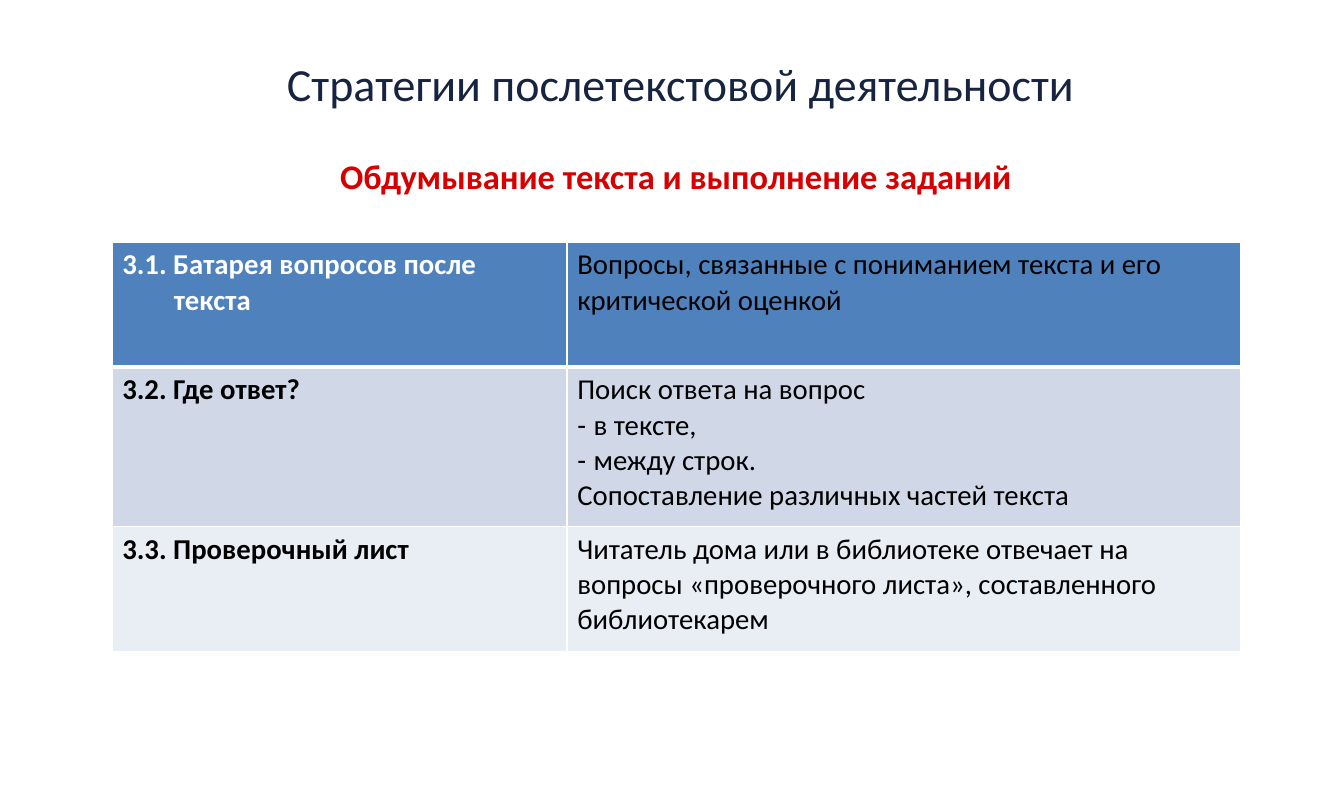
"""Build a slide with a table of post-reading strategies."""
from lxml.etree import SubElement
from pptx import Presentation
from pptx.dml.color import RGBColor
from pptx.enum.text import PP_ALIGN
from pptx.oxml.ns import qn
from pptx.util import Cm, Pt

NAVY = RGBColor(0x17, 0x24, 0x40)
RED = RGBColor(0xD6, 0x00, 0x00)
BLUE = RGBColor(0x4F, 0x81, 0xBD)
PALE_BLUE = RGBColor(0xD0, 0xD8, 0xE8)
PALE_GREY = RGBColor(0xE9, 0xED, 0xF4)
WHITE = RGBColor(0xFF, 0xFF, 0xFF)
BLACK = RGBColor(0x00, 0x00, 0x00)


def style(para, size, color, bold):
    for span in para.runs:
        span.font.name = "Calibri"
        span.font.size = Pt(size)
        span.font.color.rgb = color
        span.font.bold = bold


def add_border(cell, side, width):
    line = SubElement(cell._tc.get_or_add_tcPr(), qn(f"a:{side}"), w=str(Pt(width)))
    fill = SubElement(line, qn("a:solidFill"))
    SubElement(fill, qn("a:srgbClr"), val=str(WHITE))


deck = Presentation()
deck.slide_width = Cm(13 * 2.54)
deck.slide_height = Cm(7.84 * 2.54)
page = deck.slides.add_slide(deck.slide_layouts[6])

headings = [
    ("Стратегии послетекстовой деятельности", 5.72, 1.27, 22.02, 1.32, 0, 32, NAVY, False),
    ("Обдумывание текста и выполнение заданий", 7.92, 3.61, 17.37, 1.3, 0.13, 24, RED, True),
]
for text, left, top, width, height, inset, size, color, bold in headings:
    box = page.shapes.add_textbox(Cm(left), Cm(top), Cm(width), Cm(height))
    frame = box.text_frame
    frame.word_wrap = True
    frame.margin_left = frame.margin_right = Cm(inset)
    frame.margin_top = frame.margin_bottom = Cm(inset)
    frame.text = text
    para = frame.paragraphs[0]
    para.alignment = PP_ALIGN.CENTER
    para.line_spacing = 1.07
    style(para, size, color, bold)

strategies = [
    (
        ["3.1. Батарея вопросов после", "текста"],
        ["Вопросы, связанные с пониманием текста и его критической оценкой"],
    ),
    (
        ["3.2. Где ответ?"],
        ["Поиск ответа на вопрос", "- в тексте,", "- между строк.",
         "Сопоставление различных частей текста"],
    ),
    (
        ["3.3. Проверочный лист"],
        ["Читатель дома или в библиотеке отвечает на вопросы «проверочного листа», "
         "составленного библиотекарем"],
    ),
]
column_widths = [11.18, 16.54]
row_heights = [3.07, 3.91, 3.07]
row_fills = [BLUE, PALE_BLUE, PALE_GREY]

table = page.shapes.add_table(
    len(strategies), len(column_widths),
    Cm(2.75), Cm(5.95), Cm(sum(column_widths)), Cm(sum(row_heights)),
).table
for column, width in zip(table.columns, column_widths):
    column.width = Cm(width)

for row_index, strategy in enumerate(strategies):
    table.rows[row_index].height = Cm(row_heights[row_index])
    for column_index, lines in enumerate(strategy):
        cell = table.cell(row_index, column_index)
        borders = {
            "lnL": 1,
            "lnR": 1,
            "lnT": 3 if row_index == 1 else 1,
            "lnB": 3 if row_index == 0 else 1,
        }
        for side, width in borders.items():
            add_border(cell, side, width)
        cell.fill.solid()
        cell.fill.fore_color.rgb = row_fills[row_index]

        is_name = column_index == 0
        color = WHITE if is_name and row_index == 0 else BLACK
        cell.text_frame.text = "\n".join(line.removeprefix("- ") for line in lines)
        for line_index, (para, line) in enumerate(zip(cell.text_frame.paragraphs, lines)):
            properties = para._p.get_or_add_pPr()
            if line.startswith("- "):
                properties.set("marL", str(Cm(0.4)))
                properties.set("indent", str(Cm(-0.4)))
                SubElement(properties, qn("a:buFont"), typeface="Calibri")
                SubElement(properties, qn("a:buChar"), char="-")
            elif is_name and line_index > 0:
                properties.set("marL", str(Cm(1.27)))
            style(para, 20, color, is_name)

deck.save("out.pptx")
